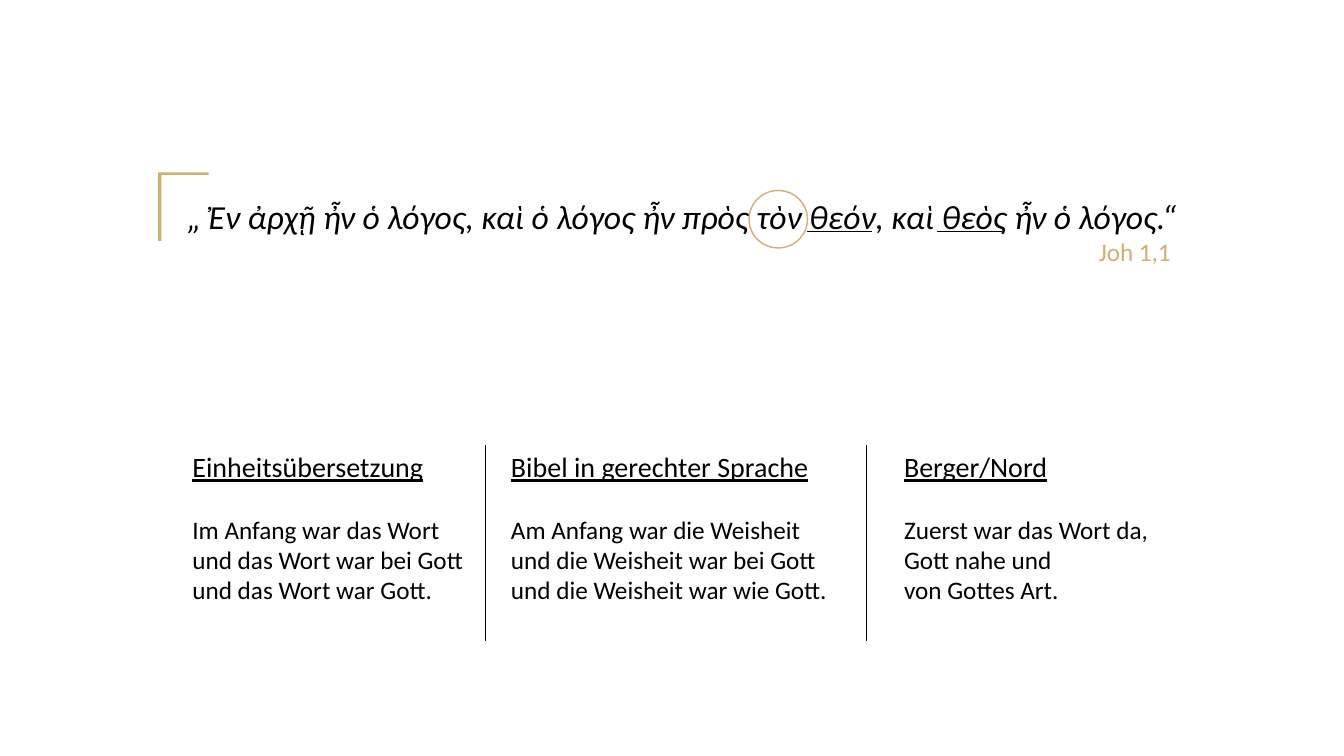
from dataclasses import dataclass
from typing import Any

from lxml.etree import SubElement
from pptx import Presentation
from pptx.dml.color import RGBColor
from pptx.enum.shapes import MSO_CONNECTOR, MSO_SHAPE
from pptx.enum.text import MSO_AUTO_SIZE, PP_ALIGN
from pptx.oxml.ns import qn
from pptx.util import Inches, Pt


@dataclass(frozen=True)
class Theme:
    font: str = "Calibri"
    ink: RGBColor = RGBColor(0x00, 0x00, 0x00)
    gold: RGBColor = RGBColor(0xD0, 0xAF, 0x72)
    quote: int = 24
    heading: int = 20
    body: int = 18
    heading_gap: int = 22
    thin: float = 0.5
    ring: float = 1


@dataclass(frozen=True)
class Area:
    left: float
    top: float
    width: float
    height: float


@dataclass(frozen=True)
class Translation:
    left: float
    width: float
    heading: str
    verses: tuple[str, ...]


@dataclass(frozen=True)
class Rule:
    left: float
    top: float
    right: float
    bottom: float


THEME = Theme()
SLIDE_WIDTH = Inches(13.33)
SLIDE_HEIGHT = Inches(7.5)
COLUMN_TOP = 58.8
COLUMN_HEIGHT = 26
UNDERLINE_TOP = 30.67
UNDERLINE_WIDTH = 4.8

TRANSLATIONS = (
    Translation(13.58, 22.28, "Einheitsübersetzung",
                ("Im Anfang war das Wort und das Wort war bei Gott "
                 "und das Wort war Gott.",)),
    Translation(37.28, 25.88, "Bibel in gerechter Sprache",
                ("Am Anfang war die Weisheit und die Weisheit war bei Gott\v"
                 "und die Weisheit war wie Gott.",)),
    Translation(66.53, 21.75, "Berger/Nord",
                ("Zuerst war das Wort da, Gott nahe und", "von Gottes Art.")),
)
DIVIDERS = tuple(Rule(left, COLUMN_TOP, left, COLUMN_TOP + COLUMN_HEIGHT)
                 for left in (36.15, 64.43))
UNDERLINES = tuple(Rule(left, UNDERLINE_TOP, left + UNDERLINE_WIDTH, UNDERLINE_TOP)
                   for left in (60.08, 69.75))


def across(percent: float) -> int:
    return round(SLIDE_WIDTH * percent / 100)


def down(percent: float) -> int:
    return round(SLIDE_HEIGHT * percent / 100)


def place(area: Area) -> tuple[int, int, int, int]:
    return across(area.left), down(area.top), across(area.width), down(area.height)


def add_text_frame(page: Any, area: Area) -> Any:
    frame = page.shapes.add_textbox(*place(area)).text_frame
    frame.word_wrap = True
    frame.auto_size = MSO_AUTO_SIZE.SHAPE_TO_FIT_TEXT
    return frame


def write(para: Any, text: str, *, size: int, color: RGBColor = THEME.ink,
          italic: bool = False, underline: bool = False) -> None:
    for index, line in enumerate(text.split("\v")):
        if index:
            para.add_line_break()
        span = para.add_run()
        span.text = line
        span.font.name = THEME.font
        span.font.size = Pt(size)
        span.font.color.rgb = color
        span.font.italic = italic
        span.font.underline = underline


def draw_quote(page: Any) -> None:
    para = add_text_frame(page, Area(12.38, 25.2, 75.9, 10.8)).paragraphs[0]
    para.alignment = PP_ALIGN.RIGHT
    write(para, "„ Ἐν ἀρχῇ ἦν ὁ λόγος, καὶ ὁ λόγος ἦν πρὸς τὸν θεόν, καὶ θεὸς ἦν ὁ λόγος.“ ",
          size=THEME.quote, italic=True)
    write(para, "Joh 1,1 ", size=THEME.body, color=THEME.gold)


def draw_corner(page: Any) -> None:
    corner = page.shapes.add_shape(MSO_SHAPE.CORNER, *place(Area(11.1, 24, 5.1, 6.67)))
    corner.adjustments[0] = 0.06
    corner.adjustments[1] = 0.05
    corner.rotation = 90
    corner.shadow.inherit = False
    corner.fill.solid()
    corner.fill.fore_color.rgb = THEME.gold
    corner.line.fill.background()


def draw_ring(page: Any) -> None:
    ring = page.shapes.add_shape(MSO_SHAPE.OVAL, *place(Area(55.73, 25.2, 4.35, 7.6)))
    ring.shadow.inherit = False
    ring.fill.background()
    ring.line.color.rgb = THEME.gold
    ring.line.width = Pt(THEME.ring)


def draw_translation(page: Any, translation: Translation) -> None:
    frame = add_text_frame(page, Area(translation.left, COLUMN_TOP,
                                      translation.width, COLUMN_HEIGHT))
    write(frame.paragraphs[0], translation.heading, size=THEME.heading, underline=True)
    for index, verse in enumerate(translation.verses):
        para = frame.add_paragraph()
        para.space_before = Pt(0 if index else THEME.heading_gap)
        write(para, verse, size=THEME.body)


def draw_rule(page: Any, rule: Rule) -> None:
    line = page.shapes.add_connector(MSO_CONNECTOR.STRAIGHT, across(rule.left),
                                     down(rule.top), across(rule.right), down(rule.bottom))
    line.line.color.rgb = THEME.ink
    line.line.width = Pt(THEME.thin)
    SubElement(line._element.spPr, qn("a:effectLst"))


def main() -> None:
    deck = Presentation()
    deck.slide_width = SLIDE_WIDTH
    deck.slide_height = SLIDE_HEIGHT
    page = deck.slides.add_slide(deck.slide_layouts[6])
    draw_quote(page)
    draw_corner(page)
    for translation in TRANSLATIONS:
        draw_translation(page, translation)
    for rule in DIVIDERS + UNDERLINES:
        draw_rule(page, rule)
    draw_ring(page)
    deck.save("out.pptx")


if __name__ == "__main__":
    main()
